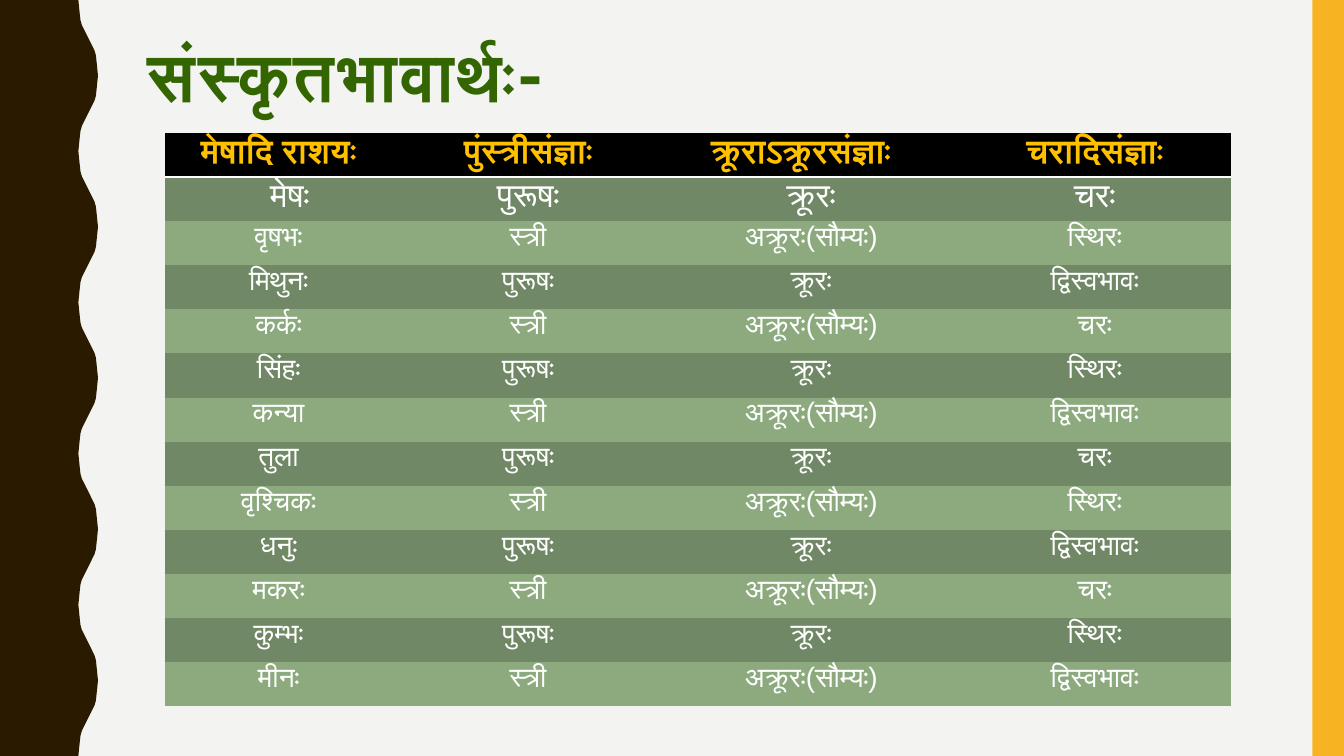
"""Build the slide listing the twelve zodiac signs and their classes."""
from dataclasses import dataclass
from itertools import cycle

from lxml import etree
from pptx import Presentation
from pptx.dml.color import RGBColor
from pptx.enum.shapes import MSO_SHAPE
from pptx.enum.text import MSO_ANCHOR, PP_ALIGN
from pptx.oxml.ns import qn
from pptx.util import Emu, Pt

RECTANGLE = MSO_SHAPE.RECTANGLE
MIDDLE, TOP = MSO_ANCHOR.MIDDLE, MSO_ANCHOR.TOP
LEFT, CENTER = PP_ALIGN.LEFT, PP_ALIGN.CENTER
EMU_PER_PX = 6350
NO_GRID_STYLE = "{2D5ABB26-0587-4C30-8999-92F81FD0307C}"


@dataclass(frozen=True)
class Theme:
    paper: str = "F3F3F2"
    wave: str = "2A1A00"
    bar: str = "F8B323"
    title: str = "336600"
    header_fill: str = "000000"
    header_text: str = "FFC000"
    body_text: str = "FFFFFF"
    bands: tuple[str, str] = ("708865", "8CAA7E")
    title_font: str = "Roboto"
    table_font: str = "Arial"
    title_size: float = 48.6
    large_size: float = 24
    body_size: float = 20


@dataclass(frozen=True)
class Box:
    left: int
    top: int
    width: int
    height: int

    def emu(self) -> tuple[Emu, ...]:
        return tuple(map(px, (self.left, self.top, self.width, self.height)))


@dataclass(frozen=True)
class Cell:
    text: str
    indent_left: int = 0
    indent_right: int = 0


THEME = Theme()
PAGE = Box(0, 0, 1920, 1080)
BAR = Box(1875, 0, 45, 1080)
TITLE = Box(197, 53, 1603, 122)
COLUMNS = (324, 389, 420, 390)
ROW_HEIGHT = 63
WAVE_COUNT = 5
WAVE_MIDDLE = 126
WAVE_BEND = ((112, 0), (113, 10), (114, 20), (115, 29), (117, 36), (120, 42), (123, 48))

HEADER = (
    Cell("मेषादि राशयः"),
    Cell("पुंस्त्रीसंज्ञाः"),
    Cell("क्रूराऽक्रूरसंज्ञाः", indent_right=30),
    Cell("चरादिसंज्ञाः"),
)
SIGNS = (
    Cell("मेषः", indent_left=32),
    *map(Cell, ("वृषभः", "मिथुनः", "कर्कः", "सिंहः", "कन्या", "तुला",
                "वृश्चिकः", "धनुः", "मकरः", "कुम्भः", "मीनः")),
)
GENDERS = (Cell("पुरूषः"), Cell("स्त्री"))
NATURES = (Cell("क्रूरः"), Cell("अक्रूरः(सौम्यः)"))
MOTIONS = (Cell("चरः"), Cell("स्थिरः"), Cell("द्विस्वभावः"))


def px(length: int) -> Emu:
    return Emu(length * EMU_PER_PX)


def paint(target, color: str) -> None:
    target.fill.solid()
    target.fill.fore_color.rgb = RGBColor.from_string(color)


def write(frame, text: str, *, font: str, size: float, color: str, bold: bool = False,
          align=CENTER, line_spacing: float = 1.0, tracking: int = 0) -> None:
    para = frame.paragraphs[0]
    para.alignment = align
    para.line_spacing = line_spacing
    span = para.add_run()
    span.text = text
    span.font.name = font
    span.font.size = Pt(size)
    span.font.bold = bold
    span.font.color.rgb = RGBColor.from_string(color)
    properties = span.font._element
    etree.SubElement(properties, qn("a:cs"), typeface=font)
    if tracking:
        properties.set("spc", str(tracking * 100))


def add_plain(shape, color: str) -> None:
    shape.shadow.inherit = False
    paint(shape, color)
    shape.line.fill.background()


def add_wave(page) -> None:
    rise = [*WAVE_BEND, (WAVE_MIDDLE, 54)]
    rise += [(2 * WAVE_MIDDLE - x, 108 - y) for x, y in reversed(WAVE_BEND)]
    fall = [(x, 216 - y) for x, y in reversed(rise[:-1])]
    period = rise + fall
    edge = [(x, y + 216 * turn) for turn in range(WAVE_COUNT) for x, y in period]
    builder = page.shapes.build_freeform(0, 0, scale=EMU_PER_PX)
    builder.add_line_segments([*edge, (0, PAGE.height)], close=True)
    add_plain(builder.convert_to_shape(), THEME.wave)


def add_title(page, text: str) -> None:
    frame = page.shapes.add_textbox(*TITLE.emu()).text_frame
    frame.word_wrap = True
    frame.vertical_anchor = MIDDLE
    frame.margin_top = frame.margin_bottom = 0
    write(frame, text, font=THEME.title_font, size=THEME.title_size, color=THEME.title,
          bold=True, align=LEFT, line_spacing=0.9, tracking=2)


def add_rule_below(cell, color: str, width: float) -> None:
    line = etree.Element(qn("a:lnB"), w=str(Pt(width)))
    fill = etree.SubElement(line, qn("a:solidFill"))
    etree.SubElement(fill, qn("a:srgbClr"), val=color)
    cell._tc.get_or_add_tcPr().insert(0, line)


def fill_cell(cell, content: Cell, fill: str, size: float, color: str, bold: bool) -> None:
    cell.margin_top = cell.margin_bottom = 0
    cell.margin_left = px(content.indent_left)
    cell.margin_right = px(content.indent_right)
    cell.vertical_anchor = TOP
    paint(cell, fill)
    write(cell.text_frame, content.text, font=THEME.table_font, size=size,
          color=color, bold=bold)


def add_signs_table(page) -> None:
    rows = [HEADER, *zip(SIGNS, cycle(GENDERS), cycle(NATURES), cycle(MOTIONS))]
    area = Box(236, 190, sum(COLUMNS), ROW_HEIGHT * len(rows))
    table = page.shapes.add_table(len(rows), len(COLUMNS), *area.emu()).table
    table._tbl.tblPr.find(qn("a:tableStyleId")).text = NO_GRID_STYLE
    for column, width in zip(table.columns, COLUMNS):
        column.width = px(width)
    for index, row in enumerate(rows):
        is_header = index == 0
        fill = THEME.header_fill if is_header else THEME.bands[(index - 1) % 2]
        color = THEME.header_text if is_header else THEME.body_text
        size = THEME.large_size if index < 2 else THEME.body_size
        for cell, content in zip(table.rows[index].cells, row):
            fill_cell(cell, content, fill, size, color, is_header)
            if is_header:
                add_rule_below(cell, THEME.body_text, 2)


def main() -> None:
    deck = Presentation()
    deck.slide_width, deck.slide_height = px(PAGE.width), px(PAGE.height)
    page = deck.slides.add_slide(deck.slide_layouts[6])
    paint(page.background, THEME.paper)
    add_wave(page)
    add_plain(page.shapes.add_shape(RECTANGLE, *BAR.emu()), THEME.bar)
    add_title(page, "संस्कृतभावार्थः-")
    add_signs_table(page)
    deck.save("out.pptx")


if __name__ == "__main__":
    main()
